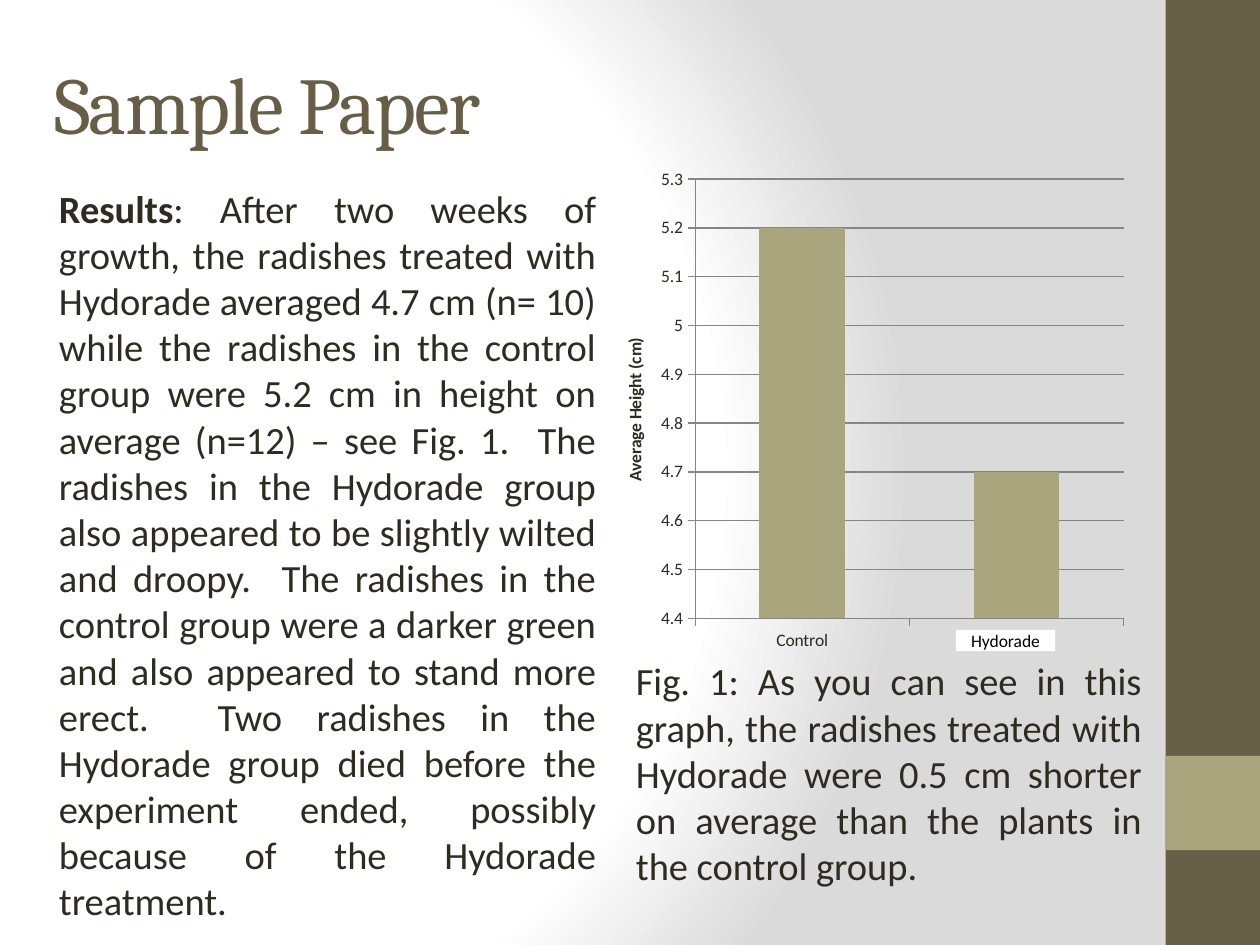
from pptx import Presentation, oxml
from pptx import util as u
from pptx.chart import data as cd
from pptx.dml import color as dml
from pptx.enum import chart as ch, shapes, text
from pptx.oxml import ns

Cm, Pt = u.Cm, u.Pt
HEX = {"brown": "675E47", "olive": "A9A57C", "ink": "2F2B20",
       "line": "868686", "white": "FFFFFF", "grey": "DADADA", "black": "000000"}
DRINK = "Hydorade"


def rgb(name):
    return dml.RGBColor.from_string(HEX[name])


def style(font, size, hue="ink", face="Calibri", bold=False):
    font.size, font.name, font.bold = Pt(size), face, bold
    font.color.rgb = rgb(hue)


def add_run(par, words, size, **look):
    run = par.add_run()
    run.text = words
    style(run.font, size, **look)
    return run


def backdrop(slide):
    """Radial glow, white at the left and grey at the right."""
    stops = "".join(
        f'<a:gs pos="{pos}000"><a:srgbClr val="{HEX[hue]}"/></a:gs>'
        for pos, hue in ((0, "white"), (75, "white"), (100, "grey")))
    glow = oxml.parse_xml(
        f'<p:bg {ns.nsdecls("p", "a")}><p:bgPr><a:gradFill rotWithShape="1">'
        f'<a:gsLst>{stops}</a:gsLst><a:path path="circle">'
        '<a:fillToRect l="20000" t="50000" r="100000" b="50000"/></a:path>'
        '</a:gradFill><a:effectLst/></p:bgPr></p:bg>')
    slide.element.cSld.insert(0, glow)


def block(slide, x, y, w, h, hue):
    box = slide.shapes.add_shape(shapes.MSO_SHAPE.RECTANGLE,
                                 Cm(x), Cm(y), Cm(w), Cm(h))
    box.shadow.inherit = False
    box.fill.solid()
    box.fill.fore_color.rgb = rgb(hue)
    box.line.fill.background()
    return box


def sidebar(slide, x, y, w, h):
    block(slide, x, y, w, h, "brown")
    block(slide, x, y + 0.8 * h, w, w, "olive")


def heading(slide, x, y, w, h, words):
    title = slide.shapes.title
    title.left, title.top, title.width, title.height = Cm(x), Cm(y), Cm(w), Cm(h)
    frame = title.text_frame
    frame.vertical_anchor = text.MSO_ANCHOR.MIDDLE
    par = frame.paragraphs[0]
    par.alignment = text.PP_ALIGN.LEFT
    run = add_run(par, words, 46, hue="brown", face="Cambria")
    run.font._element.set("spc", "-100")


def prose(slide, x, y, w, h, runs):
    """Justified text; runs are pairs of words and bold."""
    frame = slide.shapes.add_textbox(Cm(x), Cm(y), Cm(w), Cm(h)).text_frame
    frame.word_wrap = True
    par = frame.paragraphs[0]
    par.alignment = text.PP_ALIGN.JUSTIFY
    props = par._p.get_or_add_pPr()
    props.set("marL", str(Cm(0.3)))
    props.set("indent", "0")
    for words, bold in runs:
        add_run(par, words, 22, bold=bold)


def set_plot(chart, **place):
    """Fix the inner plot area; place holds x, y, w, h as parts of the chart."""
    area = chart._chartSpace.chart.plotArea
    for old in area.findall(ns.qn("c:layout")):
        area.remove(old)
    modes = '<c:xMode val="edge"/><c:yMode val="edge"/>'
    sizes = "".join(f'<c:{key} val="{part}"/>' for key, part in place.items())
    area.insert(0, oxml.parse_xml(
        f'<c:layout {ns.nsdecls("c")}><c:manualLayout>'
        f'<c:layoutTarget val="inner"/>{modes}{sizes}'
        '</c:manualLayout></c:layout>'))


def graph(slide, x, y, w, h):
    data = cd.CategoryChartData()
    data.categories = ["Control", DRINK]
    data.add_series("Series 1", (5.2, 4.7))
    chart = slide.shapes.add_chart(ch.XL_CHART_TYPE.COLUMN_CLUSTERED,
                                   Cm(x), Cm(y), Cm(w), Cm(h), data).chart
    style(chart.font, 10)
    chart.has_legend = chart.has_title = False
    set_plot(chart, x=0.18, y=0.04, w=0.8, h=0.82)
    plot = chart.plots[0]
    plot.gap_width, plot.vary_by_categories = 150, False
    fill = plot.series[0].format.fill
    fill.solid()
    fill.fore_color.rgb = rgb("olive")

    val, cat = chart.value_axis, chart.category_axis
    val.minimum_scale, val.maximum_scale, val.major_unit = 4.4, 5.3, 0.1
    val.has_major_gridlines = True
    for part in (val, cat, val.major_gridlines):
        part.format.line.color.rgb = rgb("line")
        part.format.line.width = Pt(0.75)
    for axis in (val, cat):
        axis.major_tick_mark = ch.XL_TICK_MARK.OUTSIDE
    name = val.axis_title.text_frame.paragraphs[0]
    add_run(name, "Average Height (cm)", 10, bold=True)


def figure(slide, x, y):
    """Graph, the white label over its second column name, and caption."""
    graph(slide, x, y, 10.8, 10.8)
    label = block(slide, x + 7.2, y + 9.52, 2, 0.43, "white")
    frame = label.text_frame
    frame.vertical_anchor = text.MSO_ANCHOR.MIDDLE
    frame.margin_left = frame.margin_right = 0
    frame.margin_top = frame.margin_bottom = 0
    par = frame.paragraphs[0]
    par.alignment = text.PP_ALIGN.CENTER
    add_run(par, DRINK, 10, hue="black")
    prose(slide, x + 0.2, y + 9.95, 11, 4.95, [
        (f"Fig. 1: As you can see in this graph, the radishes treated with {DRINK} "
         "were 0.5 cm shorter on average than the plants in the control group.", False)])


def main():
    deck = Presentation()
    deck.slide_width, deck.slide_height = Cm(25.4), Cm(19.05)
    slide = deck.slides.add_slide(deck.slide_layouts.get_by_name("Title Only"))
    backdrop(slide)
    sidebar(slide, 23.5, 0, 1.9, 19.05)
    heading(slide, 0.84, 0.76, 22, 2.62, "Sample Paper")
    prose(slide, 0.64, 3.6, 11.63, 14.8, [
        ("Results", True),
        (f": After two weeks of growth, the radishes treated with {DRINK} averaged "
         "4.7 cm (n= 10) while the radishes in the control group were 5.2 cm in "
         "height on average (n=12) – see Fig. 1.  The radishes in the "
         f"{DRINK} group also appeared to be slightly wilted and droopy.  The "
         "radishes in the control group were a darker green and also appeared to "
         f"stand more erect.  Two radishes in the {DRINK} group died before the "
         f"experiment ended, possibly because of the {DRINK} treatment.", False)])
    figure(slide, 12.07, 3.18)
    deck.save("out.pptx")


if __name__ == "__main__":
    main()
